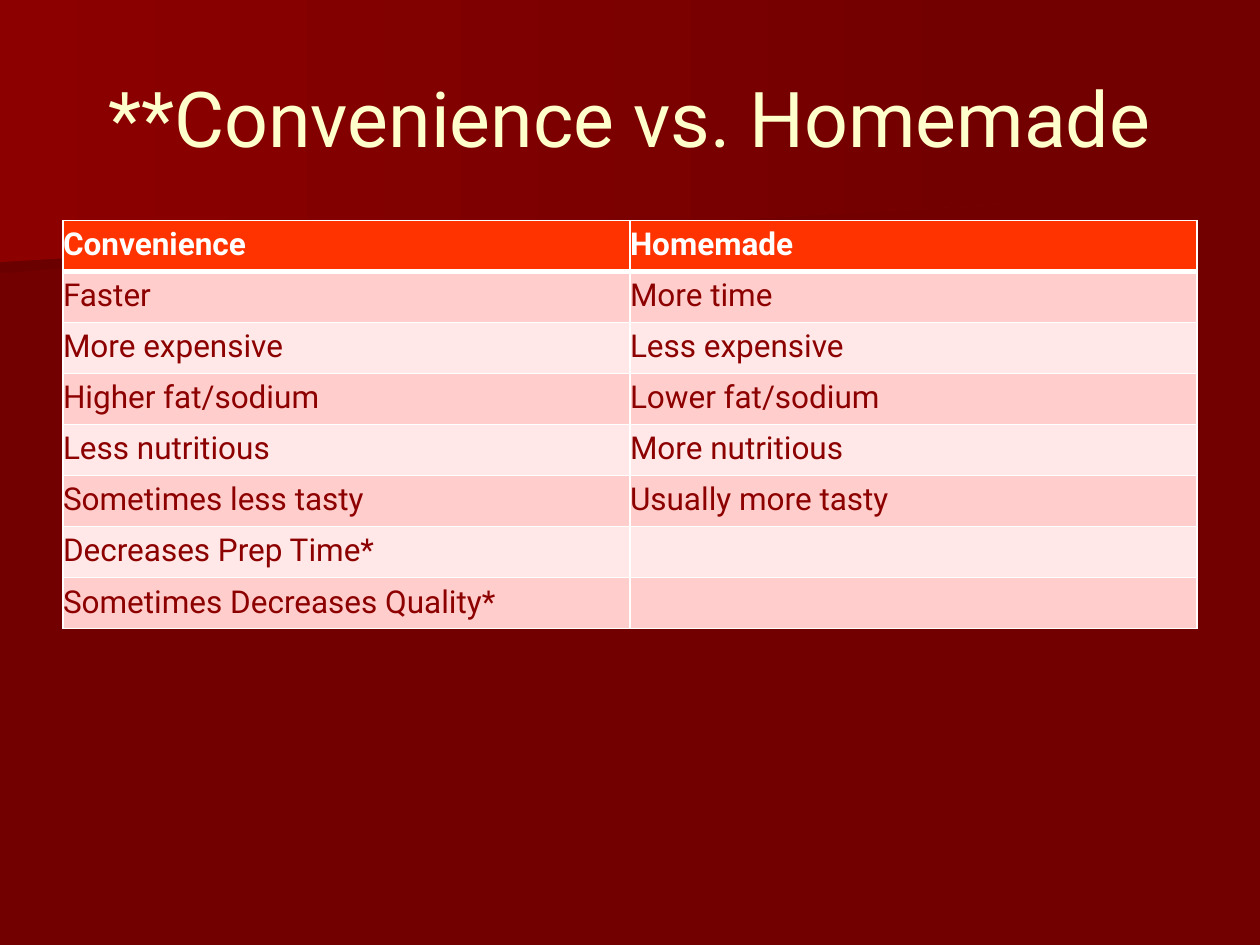
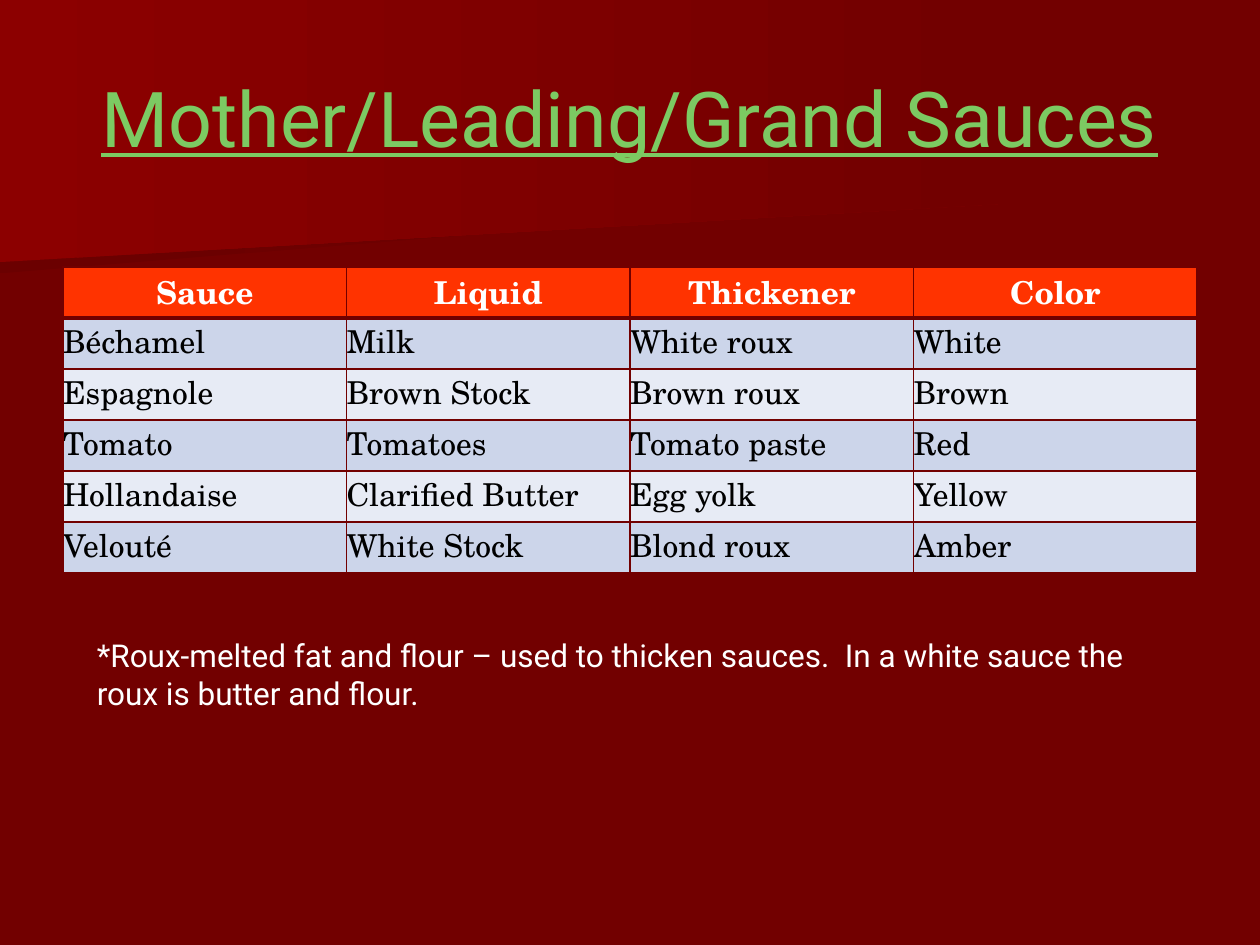
from lxml.etree import SubElement
from pptx import Presentation
from pptx.dml.color import RGBColor
from pptx.enum.text import MSO_ANCHOR, MSO_AUTO_SIZE, PP_ALIGN
from pptx.oxml.ns import qn
from pptx.util import Inches, Pt

COLORS = {
    "background": "720000", "band_shade": "6B0000", "band_glow": "8C0000",
    "title": "FFFFCC", "title_green": "7CCA62", "header": "FF3300",
    "white": "FFFFFF", "black": "000000", "dark_red": "8C0000",
    "pink": "FFCDCB", "light_pink": "FFE8E7",
    "blue": "CCD5EA", "light_blue": "E7EBF5",
}
SANS, SERIF = "Roboto", "TeX Gyre Schola"
WIDTH, HEIGHT = Inches(10), Inches(7.5)
MARGIN = int(WIDTH * 0.05)
CONTENT_WIDTH = WIDTH - 2 * MARGIN
ROW_HEIGHT = int(HEIGHT * 0.054)


def rgb(name):
    return RGBColor.from_string(COLORS[name])


def write(text_frame, text, size=18, font=SANS, color="white", bold=False,
          underline=False, align=PP_ALIGN.LEFT):
    paragraph = text_frame.paragraphs[0]
    paragraph.alignment = align
    run = paragraph.add_run()
    run.text = text
    run.font.size = Pt(size)
    run.font.name = font
    run.font.color.rgb = rgb(color)
    run.font.bold = bold
    run.font.underline = underline


presentation = Presentation()
presentation.slide_width, presentation.slide_height = WIDTH, HEIGHT

# Shared look: background, title position and two gradient bands
background = presentation.slide_master.background.fill
background.solid()
background.fore_color.rgb = rgb("background")

layout = presentation.slide_layouts.get_by_name("Title Only")
layout_title = layout.placeholders[0]
layout_title.left, layout_title.top = MARGIN, int(HEIGHT * 0.04)
layout_title.width, layout_title.height = CONTENT_WIDTH, Inches(1.25)
layout_title.text_frame.vertical_anchor = MSO_ANCHOR.MIDDLE
layout_title.text_frame.auto_size = MSO_AUTO_SIZE.NONE

slides = [presentation.slides.add_slide(layout) for _ in range(2)]

BANDS = [
    ("band_shade", [(7.78, 1.53), (0, 2.17), (0, 1.01), (7.79, 1.01), (7.78, 1.28)]),
    ("band_glow", [(7.92, 1.62), (0, 2.08), (0, 0), (7.92, 0)]),
]
for order, (band_color, corners) in enumerate(BANDS):
    points = [(Inches(x), Inches(y)) for x, y in corners]
    builder = slides[0].shapes.build_freeform(*points[0])
    builder.add_line_segments(points[1:], close=True)
    band = builder.convert_to_shape()
    band.shadow.inherit = False
    band.line.fill.background()
    band.fill.gradient()
    band.fill.gradient_angle = 0
    for stop, color, position in zip(band.fill.gradient_stops,
                                     (band_color, "background"), (0, 1)):
        stop.color.rgb = rgb(color)
        stop.position = position
    # Move the band to the layout, behind its placeholders
    band.element.nvSpPr.cNvPr.set("id", str(100 + order))
    layout.shapes.element.insert(2 + order, band.element)

CONTENT = [
    {
        "title": "**Convenience vs. Homemade", "title_color": "title", "underline": False,
        "top": 1.75, "font": SANS, "text": "dark_red", "inset": 0.05,
        "stripes": ("pink", "light_pink"), "border": "white",
        "header_align": PP_ALIGN.LEFT,
        "rows": [
            ("Convenience", "Homemade"),
            ("Faster", "More time"),
            ("More expensive", "Less expensive"),
            ("Higher fat/sodium", "Lower fat/sodium"),
            ("Less nutritious", "More nutritious"),
            ("Sometimes less tasty", "Usually more tasty"),
            ("Decreases Prep Time*", ""),
            ("Sometimes Decreases Quality*", ""),
        ],
    },
    {
        "title": "Mother/Leading/Grand Sauces", "title_color": "title_green", "underline": True,
        "top": 2.12, "font": SERIF, "text": "black", "inset": 0,
        "stripes": ("blue", "light_blue"), "border": "background",
        "header_align": PP_ALIGN.CENTER,
        "rows": [
            ("Sauce", "Liquid", "Thickener", "Color"),
            ("Béchamel", "Milk", "White roux", "White"),
            ("Espagnole", "Brown Stock", "Brown roux", "Brown"),
            ("Tomato", "Tomatoes", "Tomato paste", "Red"),
            ("Hollandaise", "Clarified Butter", "Egg yolk", "Yellow"),
            ("Velouté", "White Stock", "Blond roux", "Amber"),
        ],
    },
]

for slide, content in zip(slides, CONTENT):
    write(slide.shapes.title.text_frame, content["title"], size=44,
          color=content["title_color"], underline=content["underline"],
          align=PP_ALIGN.CENTER)

    rows = content["rows"]
    table = slide.shapes.add_table(
        len(rows), len(rows[0]), MARGIN, Inches(content["top"]),
        CONTENT_WIDTH, ROW_HEIGHT * len(rows)).table
    for row_index, row in enumerate(rows):
        is_header = row_index == 0
        for column_index, text in enumerate(row):
            cell = table.cell(row_index, column_index)
            cell.margin_left = cell.margin_right = 0
            cell.margin_top = cell.margin_bottom = Inches(content["inset"])

            # Borders come before the fill in the cell's XML
            properties = cell._tc.get_or_add_tcPr()
            widths = {"L": 1, "R": 1, "T": 3 if row_index == 1 else 1,
                      "B": 3 if is_header else 1}
            for side, width in widths.items():
                line = SubElement(properties, qn(f"a:ln{side}"), w=str(Pt(width)))
                line_fill = SubElement(line, qn("a:solidFill"))
                SubElement(line_fill, qn("a:srgbClr"), val=COLORS[content["border"]])

            cell.fill.solid()
            stripe = content["stripes"][(row_index - 1) % 2]
            cell.fill.fore_color.rgb = rgb("header" if is_header else stripe)
            if text:
                write(cell.text_frame, text, font=content["font"], bold=is_header,
                      color="white" if is_header else content["text"],
                      align=content["header_align"] if is_header else PP_ALIGN.LEFT)

roux_note = slides[1].shapes.add_textbox(
    Inches(0.67), Inches(5), Inches(8.42), Inches(0.71))
roux_note.text_frame.word_wrap = True
write(roux_note.text_frame,
      "*Roux-melted fat and flour – used to thicken sauces.  "
      "In a white sauce the roux is butter and flour.")

presentation.save("out.pptx")
